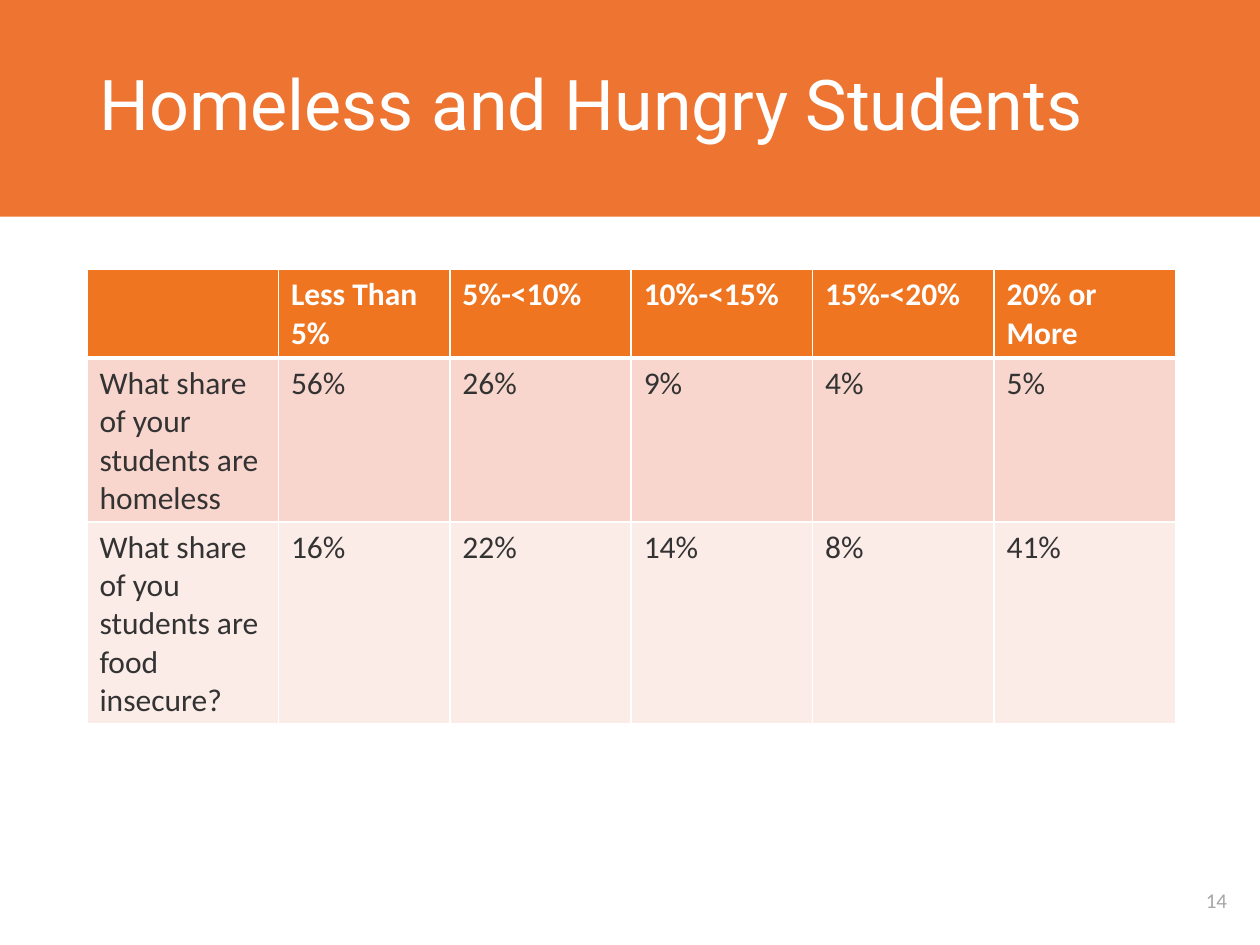
from lxml import etree
from pptx import Presentation, util as u
from pptx.dml.color import RGBColor
from pptx.enum import shapes, text
from pptx.oxml import ns

ORANGE = RGBColor(0xEE, 0x75, 0x31)
HEADER = RGBColor(0xEF, 0x75, 0x21)
ROW_PINK = RGBColor(0xF9, 0xD6, 0xCD)
ROW_PALE = RGBColor(0xFC, 0xEC, 0xE8)
WHITE = RGBColor(0xFF, 0xFF, 0xFF)
DARK = RGBColor(0x33, 0x33, 0x33)
GREY = RGBColor(0xA6, 0xA6, 0xA6)

MARGIN = 0.69
SURVEY = [
    ["", "Less Than 5%", "5%-<10%", "10%-<15%", "15%-<20%", "20% or More"],
    ["What share of your students are homeless", "56%", "26%", "9%", "4%", "5%"],
    ["What share of you students are food insecure?", "16%", "22%", "14%", "8%", "41%"],
]
COLUMN_WIDTHS = [1.52, 1.36] + [1.44] * 4
ROW_HEIGHTS = [0.7, 1.3, 1.6]
ROW_FILLS = [HEADER, ROW_PINK, ROW_PALE]


class SlideBuilder:
    TITLE = {"name": "Roboto", "size": u.Pt(40), "color": WHITE}
    NUMBER = {"name": "Calibri", "size": u.Pt(12), "color": GREY}
    HEAD = {"name": "Calibri", "size": u.Pt(18), "color": WHITE, "bold": True}
    BODY = {"name": "Calibri", "size": u.Pt(18), "color": DARK, "bold": False}

    def __init__(self, slide):
        self.slide = slide

    def set_text(self, frame, wording, style, align=text.PP_ALIGN.LEFT):
        frame.word_wrap = True
        paragraph = frame.paragraphs[0]
        paragraph.text = wording
        paragraph.alignment = align
        for key, value in style.items():
            if key == "color":
                paragraph.font.color.rgb = value
            else:
                setattr(paragraph.font, key, value)
        return paragraph

    def banner(self, *box):
        band = self.slide.shapes.add_shape(
            shapes.MSO_SHAPE.RECTANGLE, *map(u.Inches, box))
        band.shadow.inherit = False
        band.fill.solid()
        band.fill.fore_color.rgb = ORANGE
        band.line.fill.background()
        # Behind the title placeholder
        self.slide.shapes.element.insert(2, band.element)

    def title(self, wording, *box):
        title = self.slide.shapes.title
        for side, length in zip(("left", "top", "width", "height"), box):
            setattr(title, side, u.Inches(length))
        title.text_frame.vertical_anchor = text.MSO_ANCHOR.MIDDLE
        self.set_text(title.text_frame, wording, self.TITLE).line_spacing = 0.9

    def page_number(self, number, *box):
        frame = self.slide.shapes.add_textbox(*map(u.Inches, box)).text_frame
        frame.vertical_anchor = text.MSO_ANCHOR.MIDDLE
        self.set_text(frame, number, self.NUMBER, text.PP_ALIGN.CENTER)

    def borders(self, cell, widths):
        """Draw white borders; widths maps L, R, T, B to points, in that order."""
        properties = cell._tc.get_or_add_tcPr()
        for index, (side, width) in enumerate(widths.items()):
            line = etree.Element(ns.qn(f"a:ln{side}"), w=str(u.Pt(width)))
            fill = etree.SubElement(line, ns.qn("a:solidFill"))
            etree.SubElement(fill, ns.qn("a:srgbClr"), val=str(WHITE))
            properties.insert(index, line)

    def table(self, rows, left, top):
        table = self.slide.shapes.add_table(
            len(rows), len(rows[0]), u.Inches(left), u.Inches(top),
            u.Inches(sum(COLUMN_WIDTHS)), u.Inches(sum(ROW_HEIGHTS))).table
        for column, width in zip(table.columns, COLUMN_WIDTHS):
            column.width = u.Inches(width)
        for r, (row, height) in enumerate(zip(table.rows, ROW_HEIGHTS)):
            row.height = u.Inches(height)
            for cell, wording in zip(row.cells, rows[r]):
                self.set_text(cell.text_frame, wording, self.BODY if r else self.HEAD)
                cell.fill.solid()
                cell.fill.fore_color.rgb = ROW_FILLS[r]
                self.borders(cell, {"L": 1, "R": 1, "T": 3 if r == 1 else 1,
                                    "B": 3 if r == 0 else 1})


def main():
    deck = Presentation()
    deck.slide_width, deck.slide_height = u.Inches(10), u.Inches(7.5)
    builder = SlideBuilder(deck.slides.add_slide(deck.slide_layouts[5]))
    builder.banner(-0.01, 0, 10.02, 1.72)
    builder.page_number("14", 9.31, 6.95, 0.69, 0.39)
    builder.title("Homeless and Hungry Students", MARGIN, 0, 8.62, 1.71)
    builder.table(SURVEY, MARGIN, 2.14)
    deck.save("out.pptx")


if __name__ == "__main__":
    main()
